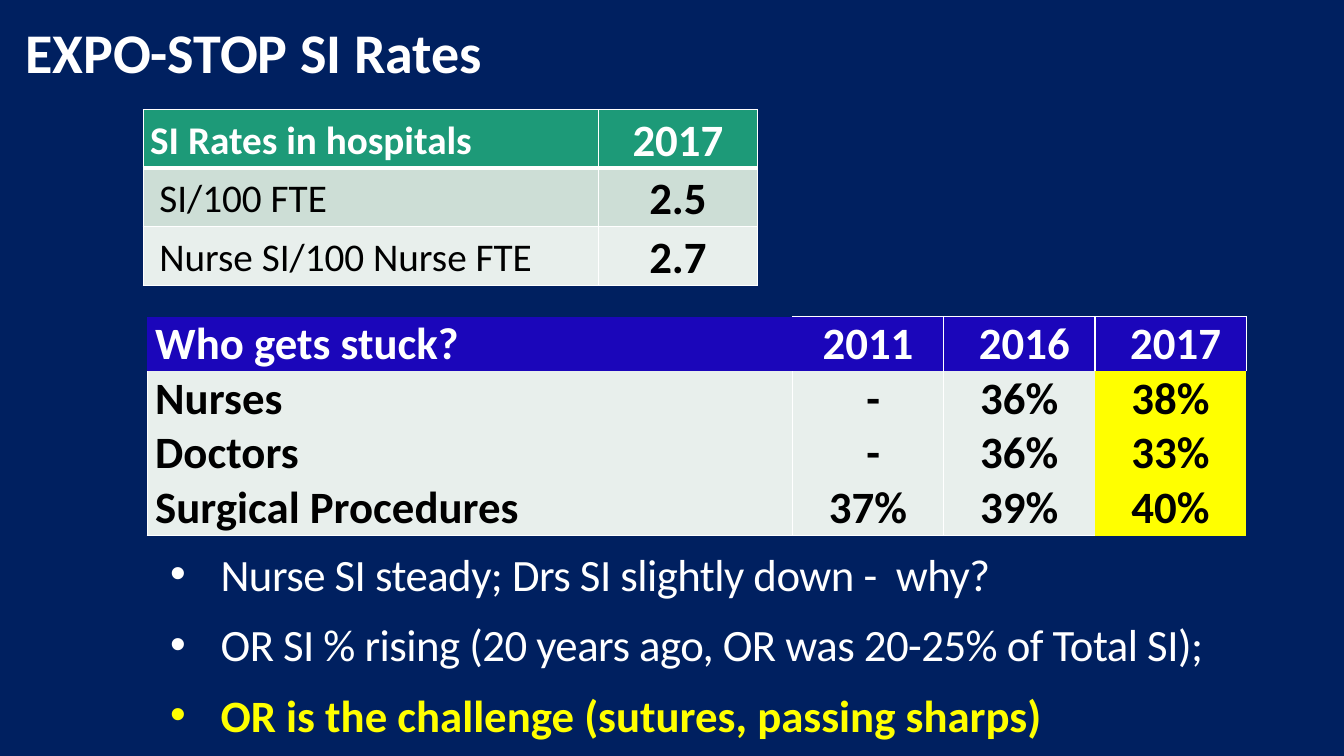
"""Build the EXPO-STOP sharps injury rates slide."""
import pptx
import pptx.dml.color
import pptx.enum.text
import pptx.oxml
import pptx.oxml.ns
import pptx.util
from pptx.util import Inches

FONT = "Calibri"
COLORS = {
    "navy": "002060", "white": "FFFFFF", "black": "000000", "yellow": "FFFF00",
    "blue": "1B06BA", "green": "1D9A78", "sage": "CDDED6", "pale": "E8EFEC",
}
TITLE = "EXPO-STOP SI Rates"
RATES = [
    ("SI Rates in hospitals", "2017"),
    ("SI/100 FTE", "2.5"),
    ("Nurse SI/100 Nurse FTE", "2.7"),
]
RATE_FILLS = ["green", "sage", "pale"]
STUCK = [
    ("Who gets stuck?", "2011", " 2016", " 2017"),
    ("Nurses", " -", "36%", "38%"),
    ("Doctors", " -", "36%", "33%"),
    ("Surgical Procedures", "37%", "39%", "40%"),
]
STUCK_HEADER_SIDES = ["", "RT", "LRT", "LRT"]
STUCK_BODY_SIDES = ["LR", "LR", "L", ""]
BULLETS = [
    ("Nurse SI steady; Drs SI slightly down -  why?", "white", False),
    ("OR SI % rising (20 years ago, OR was 20-25% of Total SI);", "white", False),
    ("OR is the challenge (sutures, passing sharps)", "yellow", True),
]
NO_STYLE = "{2D5ABB26-0587-4C30-8999-92F81FD0307C}"
PP_ALIGN = pptx.enum.text.PP_ALIGN
ANCHOR = pptx.enum.text.MSO_ANCHOR


def rgb(name):
    return pptx.dml.color.RGBColor.from_string(COLORS[name])


def add_run(paragraph, text, size, color, bold):
    run = paragraph.add_run()
    run.text = text
    run.font.name = FONT
    run.font.size = pptx.util.Pt(size)
    run.font.bold = bold
    run.font.color.rgb = rgb(color)
    return run


def set_indent(paragraph, left, first=0):
    properties = paragraph._p.get_or_add_pPr()
    properties.set("marL", str(Inches(left)))
    properties.set("indent", str(Inches(first)))
    return properties


def set_borders(cell, sides, widths):
    properties = cell._tc.get_or_add_tcPr()
    for position, side in enumerate("LRTB"):
        if side in sides:
            width, fill = pptx.util.Pt(widths.get(side, 1)), f'<a:solidFill><a:srgbClr val="{COLORS["white"]}"/></a:solidFill>'
        else:
            width, fill = 0, "<a:noFill/>"
        namespace = pptx.oxml.ns.nsdecls("a")
        line = pptx.oxml.parse_xml(f'<a:ln{side} {namespace} w="{width}">{fill}</a:ln{side}>')
        properties.insert(position, line)


def add_table(slide, rows, left, top, widths, row_height):
    frame = slide.shapes.add_table(
        len(rows), len(widths), Inches(left), Inches(top),
        Inches(sum(widths)), Inches(row_height * len(rows)))
    table = frame.table
    table.first_row = table.horz_banding = False
    table._tbl.tblPr.find(pptx.oxml.ns.qn("a:tableStyleId")).text = NO_STYLE
    for column, width in zip(table.columns, widths):
        column.width = Inches(width)
    for row in table.rows:
        row.height = Inches(row_height)
    return table


def fill_cell(cell, text, size, color, bold, fill, sides, widths, indent=None,
              margins=(0, 0), spacing=None, anchor=ANCHOR.MIDDLE):
    cell.margin_left = cell.margin_right = Inches(margins[0])
    cell.margin_top = cell.margin_bottom = Inches(margins[1])
    cell.vertical_anchor = anchor
    cell.fill.solid()
    cell.fill.fore_color.rgb = rgb(fill)
    set_borders(cell, sides, widths)
    paragraph = cell.text_frame.paragraphs[0]
    paragraph.line_spacing = spacing
    if indent is None:
        paragraph.alignment = PP_ALIGN.CENTER
    else:
        set_indent(paragraph, indent)
    add_run(paragraph, text, size, color, bold)


def add_title(slide):
    title = slide.shapes.title
    title.left, title.top = Inches(0.15), Inches(0.2)
    title.width, title.height = Inches(8.62), Inches(0.55)
    frame = title.text_frame
    frame.auto_size = pptx.enum.text.MSO_AUTO_SIZE.NONE
    frame.vertical_anchor = ANCHOR.TOP
    paragraph = frame.paragraphs[0]
    paragraph.alignment = PP_ALIGN.LEFT
    paragraph.line_spacing = 0.9
    add_run(paragraph, TITLE, 40, "white", True)


def add_stuck_table(slide):
    table = add_table(slide, STUCK, 1.46, 3.14, [6.4, 1.5, 1.5, 1.5], 0.54)
    last_row, last_column = len(STUCK) - 1, len(STUCK[0]) - 1
    for r, values in enumerate(STUCK):
        for c, text in enumerate(values):
            if r == 0:
                fill, color, sides = "blue", "white", STUCK_HEADER_SIDES[c]
            else:
                fill = "yellow" if c == last_column else "pale"
                color, sides = "black", STUCK_BODY_SIDES[c]
                if r == last_row and c < last_column:
                    sides += "B"
            fill_cell(table.cell(r, c), text, 32, color, True, fill, sides, {},
                      indent=0.08 if c == 0 else None,
                      anchor=ANCHOR.BOTTOM if r and c == 0 else ANCHOR.MIDDLE)


def add_rates_table(slide):
    table = add_table(slide, RATES, 1.42, 1.09, [4.52, 1.57], 0.57)
    for r, (label, rate) in enumerate(RATES):
        header = r == 0
        color = "white" if header else "black"
        widths = {"B": 3} if header else {"T": 3} if r == 1 else {}
        fill_cell(table.cell(r, 0), label, 28, color, header, RATE_FILLS[r], "LRTB", widths,
                  indent=0 if header else 0.09, margins=(0.07, 0.04), spacing=1.07)
        fill_cell(table.cell(r, 1), rate, 32, color, True, RATE_FILLS[r], "LRTB", widths,
                  spacing=1.07)


def add_bullets(slide):
    box = slide.shapes.add_textbox(Inches(1.59), Inches(5.37), Inches(10.63), Inches(2.05))
    frame = box.text_frame
    frame.word_wrap = True
    for i, (text, color, bold) in enumerate(BULLETS):
        paragraph = frame.add_paragraph() if i else frame.paragraphs[0]
        paragraph.space_after = pptx.util.Pt(12 if i < len(BULLETS) - 1 else 0)
        properties = set_indent(paragraph, 0.5, -0.5)
        namespace = pptx.oxml.ns.nsdecls("a")
        properties.append(pptx.oxml.parse_xml(f'<a:buFont {namespace} typeface="Arial"/>'))
        properties.append(pptx.oxml.parse_xml(f'<a:buChar {namespace} char="•"/>'))
        run = add_run(paragraph, text, 32, color, bold)
        if not bold:
            run._r.get_or_add_rPr().set("spc", "-40")


def main():
    presentation = pptx.Presentation()
    presentation.slide_width, presentation.slide_height = Inches(13.33), Inches(7.5)
    slide = presentation.slides.add_slide(presentation.slide_layouts[5])
    slide.background.fill.solid()
    slide.background.fill.fore_color.rgb = rgb("navy")
    add_stuck_table(slide)
    add_title(slide)
    add_bullets(slide)
    add_rates_table(slide)
    presentation.save("out.pptx")


if __name__ == "__main__":
    main()
